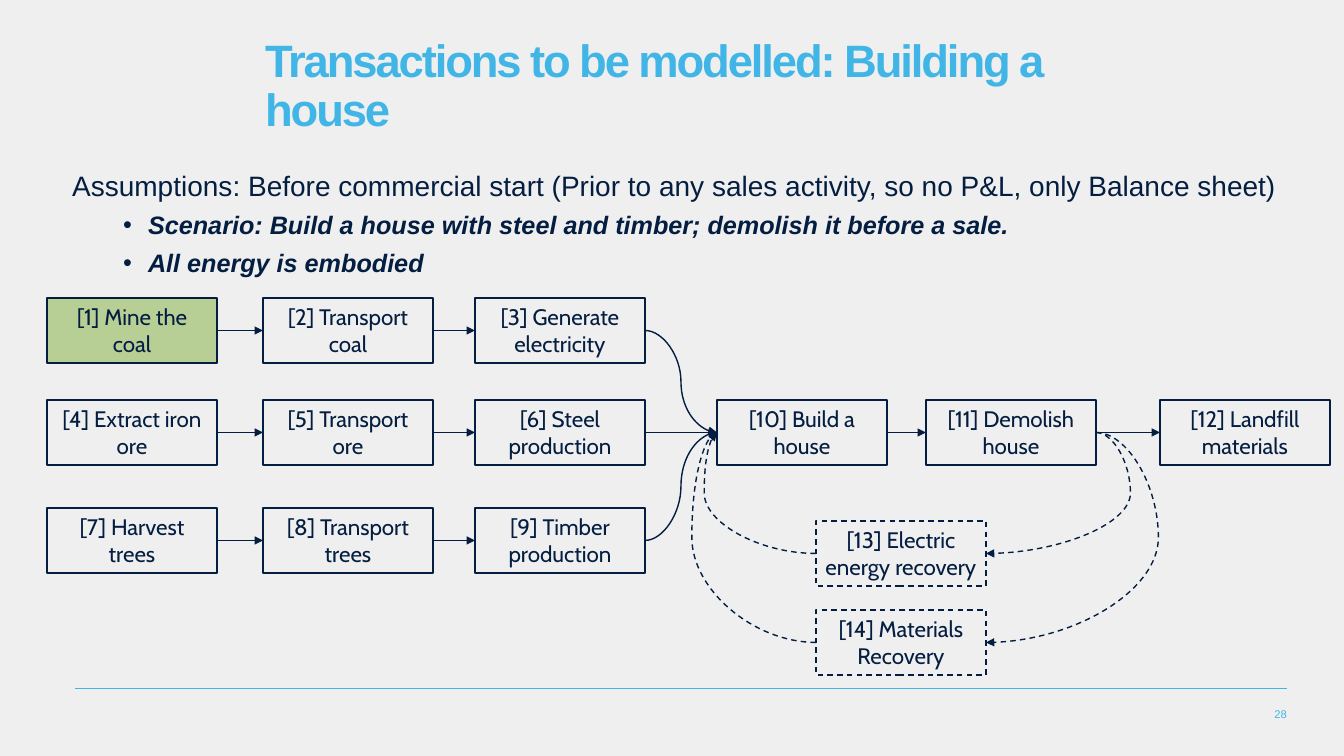
import pptx
import pptx.dml.color
import pptx.enum.dml
import pptx.enum.shapes
import pptx.enum.text
import pptx.oxml
import pptx.oxml.ns
import pptx.util

RGBColor = pptx.dml.color.RGBColor
PAPER = RGBColor(0xF0, 0xEF, 0xEF)
NAVY = RGBColor(0x04, 0x1E, 0x41)
SKY = RGBColor(0x41, 0xB6, 0xE6)
GREEN = RGBColor(0xB7, 0xCE, 0x95)

PX_PER_INCH = 100.8
STEP_W, STEP_H = 170, 65
TOP, BOTTOM_SIDE, LEFT, RIGHT = 0, 2, 1, 3
COLUMNS = (47, 263, 475, 717, 926, 1160)
COAL_Y, ORE_Y, TREES_Y = 298, 400, 508
RECOVERY_X = 816

# number: (label, left, top)
STEPS = {
    1: ("Mine the coal", COLUMNS[0], COAL_Y),
    2: ("Transport coal", COLUMNS[1], COAL_Y),
    3: ("Generate electricity", COLUMNS[2], COAL_Y),
    4: ("Extract iron ore", COLUMNS[0], ORE_Y),
    5: ("Transport ore", COLUMNS[1], ORE_Y),
    6: ("Steel production", COLUMNS[2], ORE_Y),
    7: ("Harvest trees", COLUMNS[0], TREES_Y),
    8: ("Transport trees", COLUMNS[1], TREES_Y),
    9: ("Timber production", COLUMNS[2], TREES_Y),
    10: ("Build a house", COLUMNS[3], ORE_Y),
    11: ("Demolish house", COLUMNS[4], ORE_Y),
    12: ("Landfill materials", COLUMNS[5], ORE_Y),
    13: ("Electric\nenergy recovery", RECOVERY_X, 521),
    14: ("Materials Recovery", RECOVERY_X, 610),
}
RECOVERY_STEPS = (13, 14)
STRAIGHT_FLOWS = ((1, 2), (2, 3), (4, 5), (5, 6), (7, 8), (8, 9),
                  (6, 10), (10, 11), (11, 12))
MERGING_FLOWS = ((3, 10), (9, 10))
# from, to, side of both ends, bend as a share of the width
RECOVERY_FLOWS = ((11, 13, RIGHT, -0.314), (11, 14, RIGHT, -0.568),
                  (14, 10, LEFT, 1.254), (13, 10, LEFT, 1.129))


def px(length):
    return pptx.util.Emu(round(length * 914400 / PX_PER_INCH))


def place(shape, left, top, width, height):
    shape.left, shape.top = px(left), px(top)
    shape.width, shape.height = px(width), px(height)


def set_font(font, name, size, color):
    font.name, font.size = name, pptx.util.Pt(size)
    font.color.rgb = color


def set_line(line, color, width, dashed=False):
    line.color.rgb = color
    line.width = pptx.util.Pt(width)
    if dashed:
        line.dash_style = pptx.enum.dml.MSO_LINE.DASH


def add_xml(parent, xml):
    namespace = pptx.oxml.ns.nsdecls("a")
    parent.append(pptx.oxml.parse_xml(xml.replace("/>", f" {namespace}/>", 1)))


def set_bullet(paragraph, margin, indent, char=None):
    properties = paragraph._p.get_or_add_pPr()
    properties.set("marL", str(px(margin)))
    properties.set("indent", str(px(indent)))
    add_xml(properties, f'<a:buChar char="{char}"/>' if char else "<a:buNone/>")


def fill_title(title):
    place(title, 255, 24, 929, 117)
    frame = title.text_frame
    frame.text = "Transactions to be modelled: Building a house"
    frame.auto_size = pptx.enum.text.MSO_AUTO_SIZE.NONE
    frame.vertical_anchor = pptx.enum.text.MSO_ANCHOR.BOTTOM
    heading = frame.paragraphs[0]
    heading.alignment = pptx.enum.text.PP_ALIGN.LEFT
    heading.line_spacing = 0.9
    set_font(heading.font, "Arial", 32.4, SKY)
    heading.font.bold = True
    heading.runs[0]._r.get_or_add_rPr().set("spc", "-150")


def fill_assumptions(body):
    place(body, 62, 157, 1248, 126)
    frame = body.text_frame
    frame.auto_size = pptx.enum.text.MSO_AUTO_SIZE.NONE
    frame.text = (
        "Assumptions: Before commercial start (Prior to any sales activity, "
        "so no P&L, only Balance sheet)\n"
        "Scenario: Build a house with steel and timber; demolish it before a sale.\n"
        "All energy is embodied")
    for index, paragraph in enumerate(frame.paragraphs):
        is_point = index > 0
        paragraph.level = int(is_point)
        paragraph.line_spacing = 1.2
        paragraph.space_before = pptx.util.Pt(int(is_point))
        if is_point:
            set_bullet(paragraph, 76, -25, "•")
        else:
            set_bullet(paragraph, 0, 0)
        set_font(paragraph.font, "Arial", 18 if is_point else 20, NAVY)
        paragraph.font.bold = paragraph.font.italic = is_point


def add_step(slide, number):
    label, left, top = STEPS[number]
    step = slide.shapes.add_shape(pptx.enum.shapes.MSO_SHAPE.RECTANGLE,
                                  px(left), px(top), px(STEP_W), px(STEP_H))
    step.shadow.inherit = False
    step.fill.solid()
    step.fill.fore_color.rgb = GREEN if number == 1 else PAPER
    set_line(step.line, NAVY, 1, number in RECOVERY_STEPS)
    frame = step.text_frame
    frame.text = f"[{number}] {label}"
    frame.word_wrap = "\n" not in label
    frame.vertical_anchor = pptx.enum.text.MSO_ANCHOR.MIDDLE
    for paragraph in frame.paragraphs:
        paragraph.alignment = pptx.enum.text.PP_ALIGN.CENTER
        set_font(paragraph.font, "Cabin", 16, NAVY)
    return step


def add_connector(slide, kind, ends=(0, 0, 0, 0)):
    connector = slide.shapes.add_connector(kind, *map(px, ends))
    add_xml(connector._element.spPr, "<a:effectLst/>")
    return connector


def add_flow(slide, source, target, sides=(RIGHT, LEFT), bend=None, dashed=False):
    """Join two steps with an arrow, curved when a bend is given."""
    kinds = pptx.enum.shapes.MSO_CONNECTOR
    flow = add_connector(slide, kinds.STRAIGHT if bend is None else kinds.CURVE)
    flow.begin_connect(source, sides[0])
    flow.end_connect(target, sides[1])
    set_line(flow.line, NAVY, 1, dashed)
    add_xml(flow.line._get_or_add_ln(), '<a:tailEnd type="triangle"/>')
    if bend is not None:
        guides = flow._element.spPr.find(pptx.oxml.ns.qn("a:prstGeom")).get_or_add_avLst()
        add_xml(guides, f'<a:gd name="adj1" fmla="val {round(bend * 100000)}"/>')


def add_footer(slide):
    rule = add_connector(slide, pptx.enum.shapes.MSO_CONNECTOR.STRAIGHT,
                         (75, 688, 1287, 688))
    set_line(rule.line, SKY, 0.5)
    frame = slide.shapes.add_textbox(px(1235), px(707), px(52), px(19)).text_frame
    frame.margin_left = frame.margin_right = frame.margin_top = frame.margin_bottom = 0
    frame.word_wrap = True
    frame.text = "28"
    frame.paragraphs[0].alignment = pptx.enum.text.PP_ALIGN.RIGHT
    set_font(frame.paragraphs[0].font, "Arial", 8, SKY)


def main():
    deck = pptx.Presentation()
    deck.slide_width, deck.slide_height = px(1344), px(756)
    slide = deck.slides.add_slide(deck.slide_layouts[1])
    slide.background.fill.solid()
    slide.background.fill.fore_color.rgb = PAPER
    fill_title(slide.shapes.title)
    fill_assumptions(slide.placeholders[1])
    add_footer(slide)
    steps = {number: add_step(slide, number) for number in STEPS}
    for source, target in STRAIGHT_FLOWS:
        add_flow(slide, steps[source], steps[target])
    for source, target in MERGING_FLOWS:
        add_flow(slide, steps[source], steps[target], bend=0.5)
    for source, target, side, bend in RECOVERY_FLOWS:
        add_flow(slide, steps[source], steps[target], (side, side), bend, True)
    deck.save("out.pptx")


if __name__ == "__main__":
    main()
